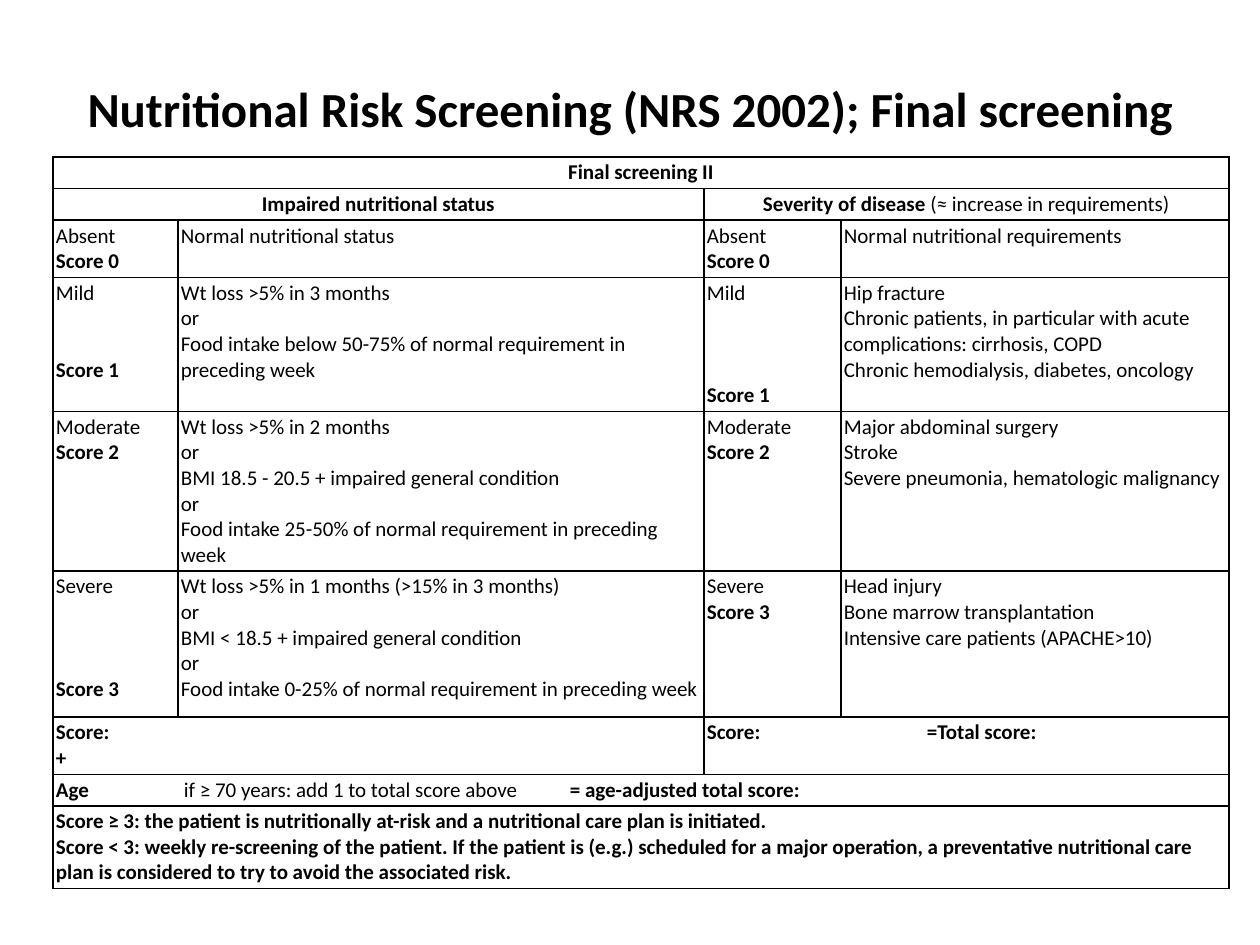
import pptx
import pptx.util
import pptx.dml.color
import pptx.enum.text
import pptx.oxml.ns
import lxml.etree

BLACK = pptx.dml.color.RGBColor(0x00, 0x00, 0x00)
FONT = "Calibri"
CENTER = pptx.enum.text.PP_ALIGN.CENTER
LEFT = pptx.enum.text.PP_ALIGN.LEFT
MIDDLE = pptx.enum.text.MSO_ANCHOR.MIDDLE
TOP = pptx.enum.text.MSO_ANCHOR.TOP
LINE_POINTS = 14.65


def px(length):
    return pptx.util.Emu(round(length * 914400 / 126))


def add_run(paragraph, text, size, bold):
    run = paragraph.add_run()
    run.text = text
    run.font.name = FONT
    run.font.size = pptx.util.Pt(size)
    run.font.bold = bold
    run.font.color.rgb = BLACK


presentation = pptx.Presentation()
presentation.slide_width = px(1260)
presentation.slide_height = px(945)
slide = presentation.slides.add_slide(presentation.slide_layouts[5])

title = slide.shapes.title
title.left, title.top, title.width, title.height = px(63), px(38), px(1134), px(78)
title_frame = title.text_frame
title_frame.auto_size = pptx.enum.text.MSO_AUTO_SIZE.NONE
title_frame.word_wrap = True
title_frame.vertical_anchor = MIDDLE
title_frame.margin_top = px(62)
title_frame.margin_bottom = 0
title_frame.paragraphs[0].alignment = CENTER
add_run(title_frame.paragraphs[0], "Nutritional Risk Screening (NRS 2002); Final screening", 28, True)

column_widths = [125, 526, 137, 388]
row_heights = [29, 29, 53, 123, 146, 146, 53, 29, 76]
table_shape = slide.shapes.add_table(
    len(row_heights), len(column_widths), px(53), px(157), px(sum(column_widths)), px(sum(row_heights))
)
table = table_shape.table
table.first_row = False
table.horz_banding = False
for column, width in zip(table.columns, column_widths):
    column.width = px(width)
for row, height in zip(table.rows, row_heights):
    row.height = px(height)

for row in table.rows:
    for cell in row.cells:
        cell.margin_left = cell.margin_right = px(3)
        cell.margin_top = cell.margin_bottom = px(3)
        properties = cell._tc.get_or_add_tcPr()
        for side in ("a:lnL", "a:lnR", "a:lnT", "a:lnB"):
            border = lxml.etree.SubElement(properties, pptx.oxml.ns.qn(side), w="12700")
            fill = lxml.etree.SubElement(border, pptx.oxml.ns.qn("a:solidFill"))
            lxml.etree.SubElement(fill, pptx.oxml.ns.qn("a:srgbClr"), val=str(BLACK))
        cell.fill.background()

contents = {
    (0, 0, 4): [[("Final screening II", True)]],
    (1, 0, 2): [[("Impaired nutritional status", True)]],
    (1, 2, 2): [[("Severity of disease ", True), ("(≈ increase in requirements)", False)]],
    (6, 0, 2): [[("Score:", True)], [("+", True)]],
    (6, 2, 2): [[("Score:\t=Total score:", True)]],
    (7, 0, 4): [[
        ("Age", True),
        ("\tif ≥ 70 years: add 1 to total score above", False),
        ("\t= age-adjusted total score:", True),
    ]],
    (8, 0, 4): [
        [("Score ≥ 3: the patient is nutritionally at-risk and a nutritional care plan is initiated.", True)],
        [("Score < 3: weekly re-screening of the patient. If the patient is (e.g.) scheduled for a major "
          "operation, a preventative nutritional care plan is considered to try to avoid the associated risk.", True)],
    ],
}

grades = [
    ("Absent", ["Normal nutritional status"], ["Normal nutritional requirements"]),
    ("Mild",
     ["Wt loss >5% in 3 months", "or",
      "Food intake below 50-75% of normal requirement in preceding week"],
     ["Hip fracture",
      "Chronic patients, in particular with acute complications: cirrhosis, COPD",
      "Chronic hemodialysis, diabetes, oncology"]),
    ("Moderate",
     ["Wt loss >5% in 2 months", "or", "BMI 18.5 - 20.5 + impaired general condition", "or",
      "Food intake 25-50% of normal requirement in preceding week"],
     ["Major abdominal surgery", "Stroke", "Severe pneumonia, hematologic malignancy"]),
    ("Severe",
     ["Wt loss >5% in 1 months (>15% in 3 months)", "or", "BMI < 18.5 + impaired general condition", "or",
      "Food intake 0-25% of normal requirement in preceding week"],
     ["Head injury", "Bone marrow transplantation", "Intensive care patients (APACHE>10)"]),
]
for score, (grade, status, disease) in enumerate(grades):
    for column, criteria in ((0, status), (2, disease)):
        contents[score + 2, column, 1] = [[(grade, False)], [(f"Score {score}", True)]]
        contents[score + 2, column + 1, 1] = [[(criterion, False)] for criterion in criteria]

score_gaps = {(3, 0): 2, (3, 2): 3, (5, 0): 3}
tab_stops = {(6, 2): [220], (7, 0): [128, 514]}

for (row, column, span), lines in contents.items():
    cell = table.cell(row, column)
    if span > 1:
        cell.merge(table.cell(row, column + span - 1))
    is_heading = row < 2
    cell.vertical_anchor = MIDDLE if is_heading else TOP
    frame = cell.text_frame
    for index, runs in enumerate(lines):
        paragraph = frame.add_paragraph() if index else frame.paragraphs[0]
        paragraph.alignment = CENTER if is_heading else LEFT
        if index and (row, column) in score_gaps:
            paragraph.space_before = pptx.util.Pt(score_gaps[row, column] * LINE_POINTS)
        if (row, column) in tab_stops:
            tab_list = lxml.etree.SubElement(paragraph._p.get_or_add_pPr(), pptx.oxml.ns.qn("a:tabLst"))
            for stop in tab_stops[row, column]:
                lxml.etree.SubElement(tab_list, pptx.oxml.ns.qn("a:tab"), pos=str(px(stop)), algn="l")
        for text, bold in runs:
            add_run(paragraph, text, 12, bold)

presentation.save("out.pptx")
